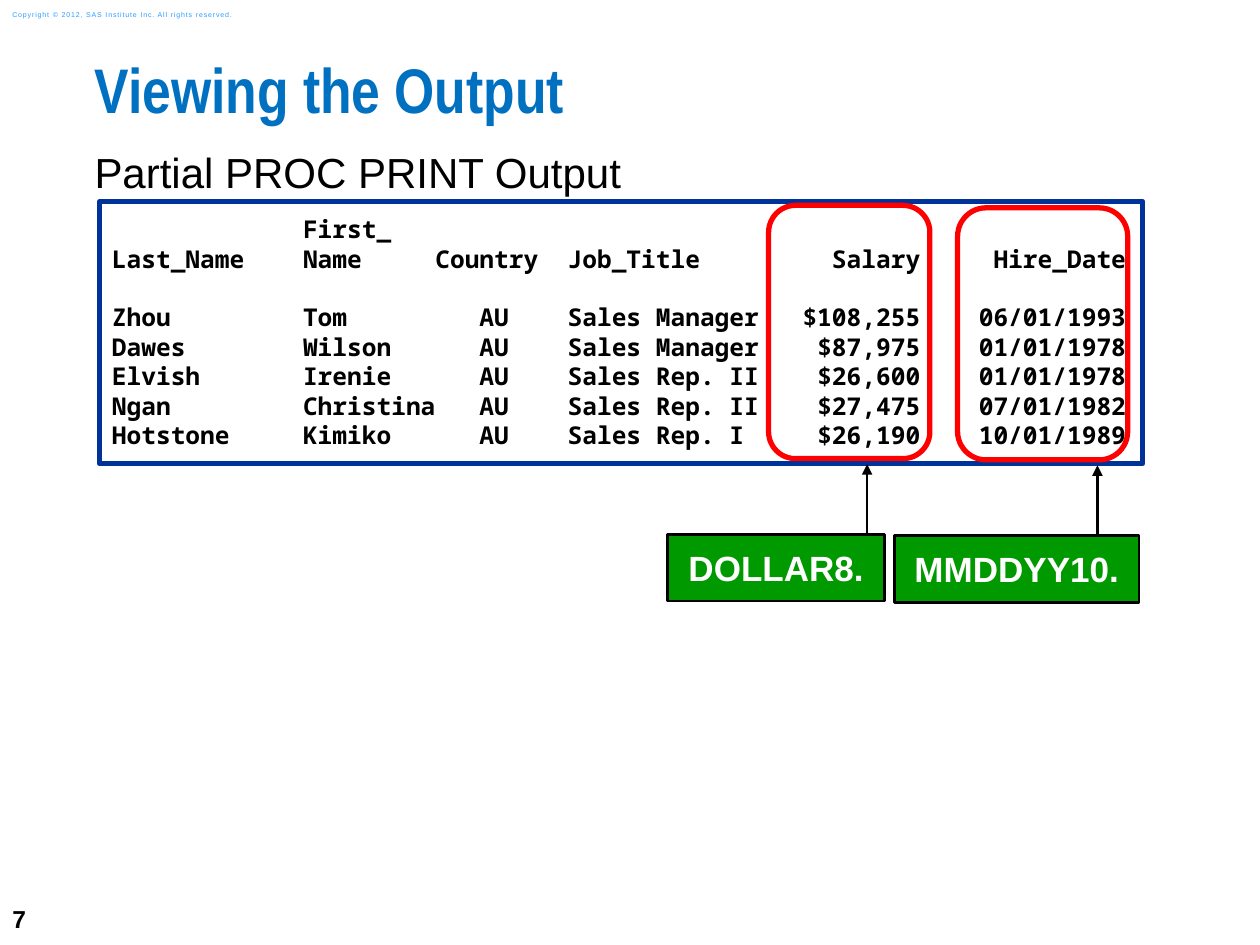
from dataclasses import dataclass

from pptx import Presentation
from pptx.dml.color import RGBColor
from pptx.enum.shapes import MSO_SHAPE
from pptx.enum.text import MSO_ANCHOR, PP_ALIGN
from pptx.oxml.ns import qn
from pptx.util import Inches, Pt
from lxml.etree import SubElement


@dataclass(frozen=True)
class Theme:
    sans: str = "Arial"
    narrow: str = "Arial Narrow"
    mono: str = "Noto Sans Mono"
    black: str = "000000"
    white: str = "FFFFFF"
    title: str = "0070C0"
    legal: str = "2A9CFF"
    frame: str = "003399"
    mark: str = "FF0000"
    label: str = "009900"
    head: int = 36
    lead: int = 24
    tag: int = 20
    code: int = 14
    fine: int = 4


THEME = Theme()
CHAR = 0.6 * THEME.code / 72  # width of one listing character, inches

# Listing: rows, and tab stops counted in characters
HEADS = ["\tFirst_", "Last_Name\tName\tCountry\tJob_Title\tSalary\tHire_Date"]
ROWS = [
    "Zhou\tTom\tAU\tSales Manager\t$108,255\t06/01/1993",
    "Dawes\tWilson\tAU\tSales Manager\t$87,975\t01/01/1978",
    "Elvish\tIrenie\tAU\tSales Rep. II\t$26,600\t01/01/1978",
    "Ngan\tChristina\tAU\tSales Rep. II\t$27,475\t07/01/1982",
    "Hotstone\tKimiko\tAU\tSales Rep. I\t$26,190\t10/01/1989",
]
HEAD_LAND, ROW_LAND = 22, 25  # country column: heading and centred code


def place(shape, left, top, width, height):
    shape.left, shape.top = Inches(left), Inches(top)
    shape.width, shape.height = Inches(width), Inches(height)


def inset(frame, gap, anchor=MSO_ANCHOR.TOP):
    frame.margin_left = frame.margin_right = Inches(gap)
    frame.margin_top = frame.margin_bottom = Inches(gap)
    frame.vertical_anchor = anchor
    frame.word_wrap = True


def write(para, text, size, color=THEME.black, font=THEME.sans, bold=False,
          align=PP_ALIGN.LEFT, track=None):
    para.alignment = align
    run = para.add_run()
    run.text = text
    run.font.size = Pt(size)
    run.font.name = font
    run.font.bold = bold
    run.font.color.rgb = RGBColor.from_string(color)
    if track:
        run.font._element.set("spc", str(track))


def add_box(slide, kind, area, line, weight, fill=None):
    box = slide.shapes.add_shape(kind, *map(Inches, area))
    box.shadow.inherit = False
    if fill:
        box.fill.solid()
        box.fill.fore_color.rgb = RGBColor.from_string(fill)
    else:
        box.fill.background()
    box.line.color.rgb = RGBColor.from_string(line)
    box.line.width = Pt(weight)
    return box


def add_note(slide, area, text, **style):
    frame = slide.shapes.add_textbox(*map(Inches, area)).text_frame
    frame.vertical_anchor = MSO_ANCHOR.MIDDLE
    frame.word_wrap = True
    write(frame.paragraphs[0], text, **style)


def set_tabs(para, land):
    tabs = SubElement(para._p.get_or_add_pPr(), qn("a:tabLst"))
    for stop, side in ((13, "l"), (land, "l"), (31, "l"), (55, "r"), (69, "r")):
        SubElement(tabs, qn("a:tab"), pos=str(Inches(stop * CHAR)), algn=side)


def add_list(slide):
    box = add_box(slide, MSO_SHAPE.RECTANGLE, (0.79, 1.6, 8.28, 2.08),
                  THEME.frame, 3, THEME.white)
    frame = box.text_frame
    inset(frame, 0.1)
    for num, row in enumerate(HEADS + ROWS):
        para = frame.add_paragraph() if num else frame.paragraphs[0]
        set_tabs(para, HEAD_LAND if num < len(HEADS) else ROW_LAND)
        if num == len(HEADS):
            para.space_before = Pt(16.8)  # one line between heads and rows
        write(para, row, THEME.code, font=THEME.mono, bold=True)


def add_mark(slide, area):
    add_box(slide, MSO_SHAPE.ROUNDED_RECTANGLE, area, THEME.mark, 3)


def add_call(slide, area, text, bends):
    box = add_box(slide, MSO_SHAPE.LINE_CALLOUT_1, area,
                  THEME.black, 1.5, THEME.label)
    for num, bend in enumerate(bends):
        box.adjustments[num] = bend
    SubElement(box.line._get_or_add_ln(), qn("a:tailEnd"), type="triangle")
    inset(box.text_frame, 0.1, MSO_ANCHOR.MIDDLE)
    write(box.text_frame.paragraphs[0], text, THEME.tag, THEME.white,
          bold=True, align=PP_ALIGN.CENTER)


def add_heads(slide):
    title, body = slide.placeholders
    place(title, 0.75, 0.5, 9.25, 0.75)
    inset(title.text_frame, 0)
    para = title.text_frame.paragraphs[0]
    para.line_spacing = 0.83
    write(para, "Viewing the Output", THEME.head, THEME.title,
          THEME.narrow, bold=True)

    place(body, 0.75, 1.16, 6.47, 4)
    inset(body.text_frame, 0)
    para = body.text_frame.paragraphs[0]
    props = para._p.get_or_add_pPr()
    props.set("marL", "0")
    props.set("indent", "0")
    SubElement(props, qn("a:buNone"))
    para.space_before = Pt(0)
    write(para, "Partial PROC PRINT Output", THEME.lead)


def main():
    deck = Presentation()
    deck.slide_width, deck.slide_height = Inches(10), Inches(7.5)
    slide = deck.slides.add_slide(deck.slide_layouts[1])

    # Page number and copyright line
    add_note(slide, (0, 7.08, 0.58, 0.42), "7", size=THEME.code, bold=True)
    add_note(slide, (0, 0.03, 2.11, 0.17),
             "Copyright © 2012, SAS Institute Inc. All rights reserved.",
             size=THEME.fine, color=THEME.legal, track=50)

    # Title, lead line and listing
    add_heads(slide)
    add_list(slide)

    # Marked columns and their formats
    add_mark(slide, (6.1, 1.63, 1.28, 2.01))
    add_mark(slide, (7.6, 1.65, 1.35, 2))
    add_call(slide, (5.3, 4.24, 1.72, 0.53), "DOLLAR8.",
             (-0.02, 0.92, -1.05, 0.92))
    add_call(slide, (7.1, 4.25, 1.94, 0.53), "MMDDYY10.",
             (0, 0.83, -1.05, 0.83))

    deck.save("out.pptx")


if __name__ == "__main__":
    main()
